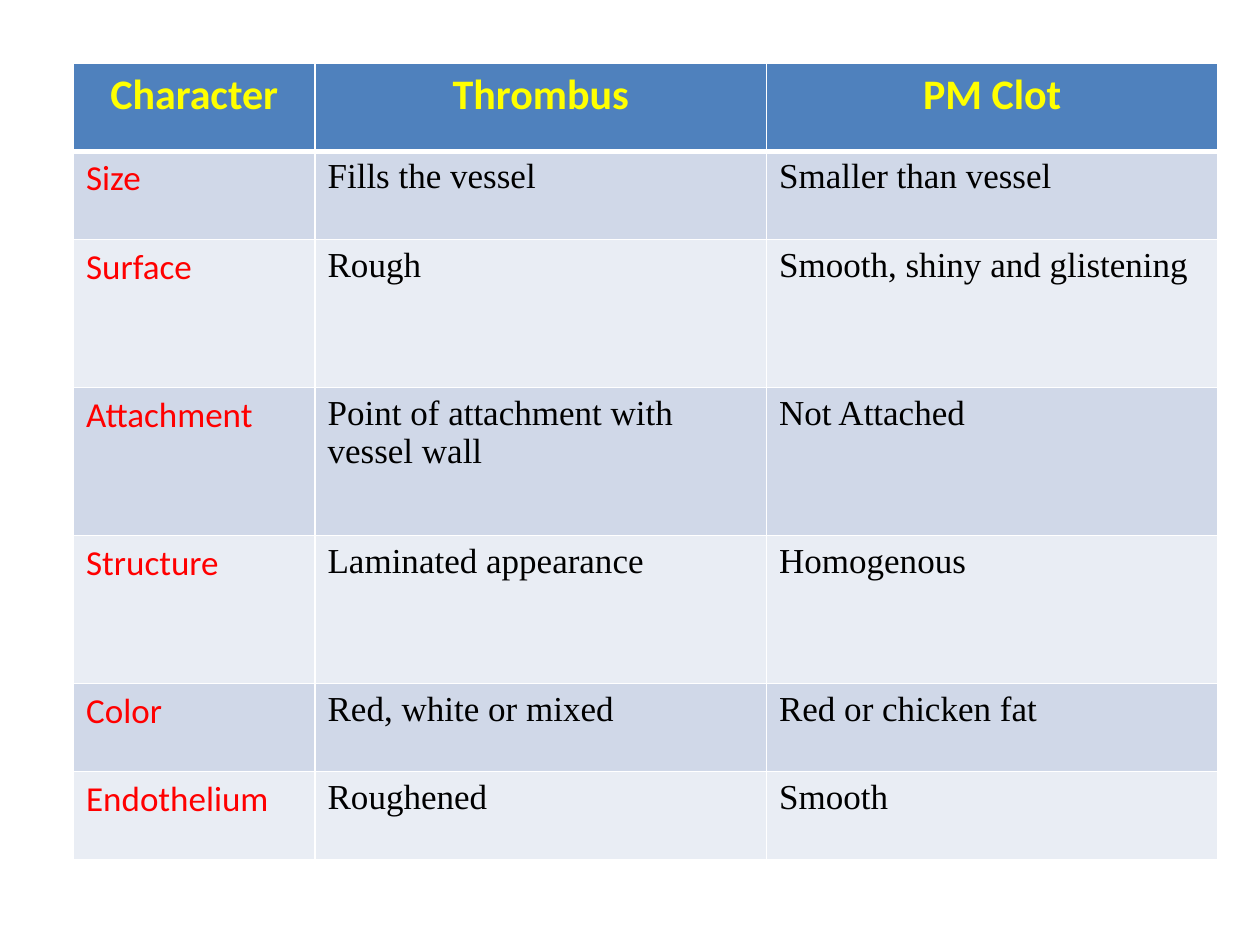
from lxml.etree import SubElement
from pptx import Presentation
from pptx.dml.color import RGBColor
from pptx.enum.text import PP_ALIGN
from pptx.oxml.ns import qn
from pptx.util import Pt

ROWS = [
    ("Character", "Thrombus", "PM Clot"),
    ("Size", "Fills the vessel", "Smaller than vessel"),
    ("Surface", "Rough", "Smooth, shiny and glistening"),
    ("Attachment", "Point of attachment with vessel wall", "Not Attached"),
    ("Structure", "Laminated appearance", "Homogenous"),
    ("Color", "Red, white or mixed", "Red or chicken fat"),
    ("Endothelium", "Roughened", "Smooth"),
]
LOW, TALL = 50.4, 84.6
HEIGHTS = [LOW, LOW, TALL, TALL, TALL, LOW, LOW]
WIDTHS = [138, 258, 258]
BANDS = ["E9EDF4", "D0D8E8"]


def color(code):
    return RGBColor.from_string(code)


def add_edges(cell, row):
    """White rules, thicker below the header row."""
    props = cell._tc.get_or_add_tcPr()
    widths = {"L": 1, "R": 1, "T": 3 if row == 1 else 1, "B": 3 if row == 0 else 1}
    for side, width in widths.items():
        line = SubElement(props, qn(f"a:ln{side}"), w=str(Pt(width)))
        fill = SubElement(line, qn("a:solidFill"))
        SubElement(fill, qn("a:srgbClr"), val="FFFFFF")


def fill_cell(cell, text, back, face, size, ink, bold=False, align=PP_ALIGN.LEFT):
    cell.fill.solid()
    cell.fill.fore_color.rgb = color(back)
    cell.text = text
    para = cell.text_frame.paragraphs[0]
    para.alignment = align
    font = para.font
    font.name, font.size, font.bold = face, Pt(size), bold
    font.color.rgb = color(ink)


def add_grid(slide):
    frame = slide.shapes.add_table(len(ROWS), len(WIDTHS), Pt(42), Pt(36),
                                   Pt(sum(WIDTHS)), Pt(sum(HEIGHTS)))
    table = frame.table
    for col, width in zip(table.columns, WIDTHS):
        col.width = Pt(width)
    for row, height in zip(table.rows, HEIGHTS):
        row.height = Pt(height)

    for r, texts in enumerate(ROWS):
        for c, text in enumerate(texts):
            cell = table.cell(r, c)
            add_edges(cell, r)
            if r == 0:  # header
                fill_cell(cell, text, "4F81BD", "Calibri", 24, "FFFF00",
                          True, PP_ALIGN.CENTER)
            elif c == 0:  # row label
                fill_cell(cell, text, BANDS[r % 2], "Calibri", 20, "FF0000")
            else:
                fill_cell(cell, text, BANDS[r % 2], "Times New Roman", 20, "000000")


def main():
    deck = Presentation()
    deck.slide_width, deck.slide_height = Pt(720), Pt(540)
    slide = deck.slides.add_slide(deck.slide_layouts[6])
    add_grid(slide)
    deck.save("out.pptx")


if __name__ == "__main__":
    main()
